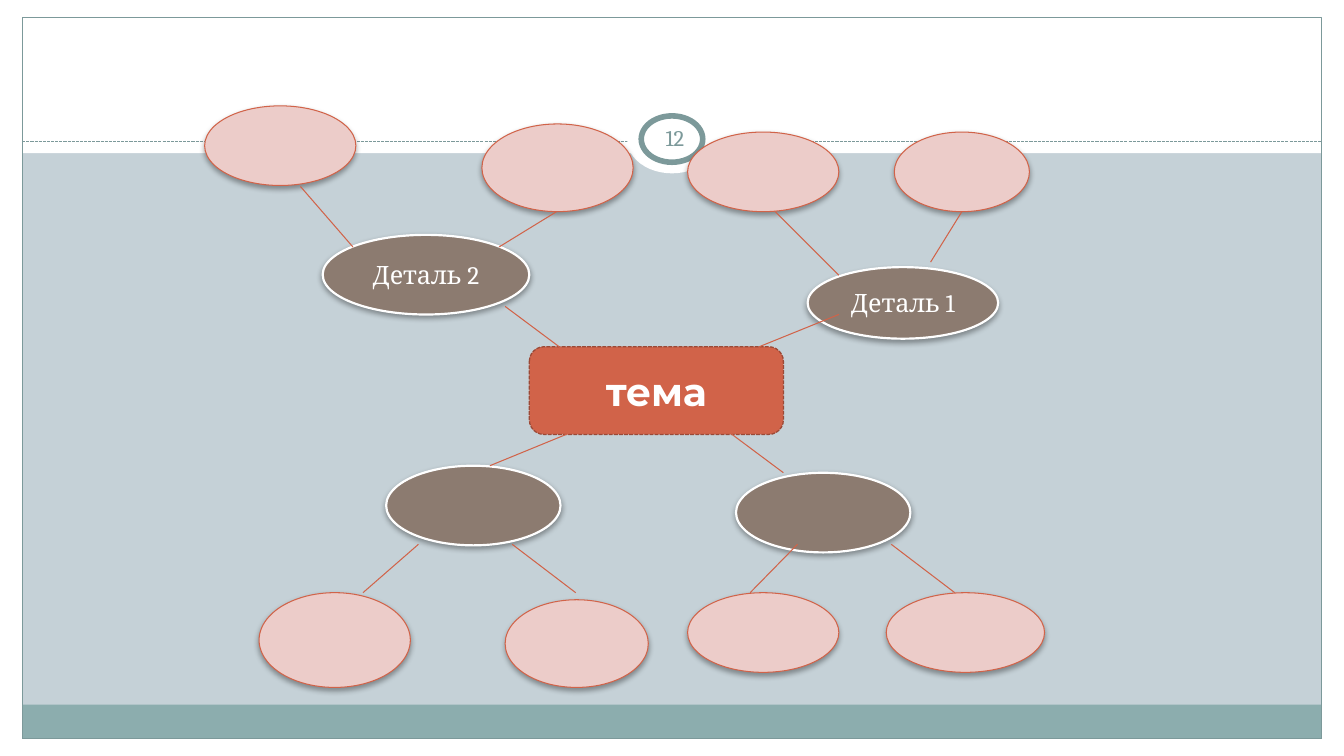
from dataclasses import dataclass

from lxml import etree
from pptx import Presentation
from pptx.dml.color import RGBColor
from pptx.enum.dml import MSO_LINE_DASH_STYLE as Dash
from pptx.enum.shapes import MSO_CONNECTOR as Connector, MSO_SHAPE as Shape
from pptx.enum.text import MSO_ANCHOR as Anchor, PP_ALIGN as Align
from pptx.oxml.ns import qn
from pptx.util import Inches, Pt


@dataclass(frozen=True)
class Theme:
    background: str = "C5D1D7"
    white: str = "FFFFFF"
    footer: str = "8CADAE"
    frame: str = "7C999A"
    accent: str = "D16349"
    accent_dark: str = "9B4936"
    detail: str = "8C7B70"
    leaf: str = "ECCCC9"
    shadow: str = "000000"
    body_font: str = "Cambria"
    topic_font: str = "Montserrat"
    topic_size: float = 28
    detail_size: float = 18
    number_size: float = 16
    thin: float = 0.75


class MindMap:
    def __init__(self, prs, theme):
        self.theme = theme
        self.s = prs.slides.add_slide(prs.slide_layouts[6])
        fill = self.s.background.fill
        fill.solid()
        fill.fore_color.rgb = RGBColor.from_string(theme.background)

    def outline(self, line, color, width, dash=None):
        line.color.rgb = RGBColor.from_string(color)
        line.width = Pt(width)
        if dash:
            line.dash_style = dash

    def shape(self, kind, box, fill=None, line=None):
        """Add a flat shape; line is (color, width[, dash])."""
        sp = self.s.shapes.add_shape(kind, *map(Inches, box))
        if fill:
            sp.fill.solid()
            sp.fill.fore_color.rgb = RGBColor.from_string(fill)
        else:
            sp.fill.background()
        if line:
            self.outline(sp.line, *line)
        else:
            sp.line.fill.background()
        sp.shadow.inherit = False
        return sp

    def bubble(self, box, fill, line):
        """Add an ellipse with a soft shadow below it."""
        sp = self.shape(Shape.OVAL, box, fill, line)
        effects = sp.element.spPr.find(qn("a:effectLst"))
        shadow = etree.SubElement(
            effects, qn("a:outerShdw"), blurRad=str(Pt(4)), dist=str(Pt(2)),
            dir="5400000", algn="ctr", rotWithShape="0")
        color = etree.SubElement(shadow, qn("a:srgbClr"), val=self.theme.shadow)
        etree.SubElement(color, qn("a:alpha"), val="35000")
        return sp

    def line(self, start, end, color, dash=None):
        cn = self.s.shapes.add_connector(
            Connector.STRAIGHT, *map(Inches, start + end))
        self.outline(cn.line, color, self.theme.thin, dash)
        etree.SubElement(cn.element.spPr, qn("a:effectLst"))

    def label(self, sp, text, color, **font):
        """Put one centred line of text in a shape."""
        tf = sp.text_frame
        tf.word_wrap = True
        tf.vertical_anchor = Anchor.MIDDLE
        p = tf.paragraphs[0]
        p.alignment = Align.CENTER
        r = p.add_run()
        r.text = text
        r.font.color.rgb = RGBColor.from_string(color)
        for name, value in font.items():
            setattr(r.font, name, value)

    def page_number(self, box, text):
        sp = self.s.shapes.add_textbox(*map(Inches, box))
        for side in ("left", "top", "right", "bottom"):
            setattr(sp.text_frame, f"margin_{side}", Inches(0.05))
        self.label(sp, text, self.theme.frame,
                   name=self.theme.body_font, size=Pt(self.theme.number_size))


WIDTH, HEIGHT = 13.33, 7.5
EDGE = 0.22
INNER = WIDTH - 2 * EDGE

MARGINS = [
    (0, 7.33, WIDTH, 0.17),
    (0, 0, WIDTH, 1.52),
    (0, 0, EDGE, HEIGHT),
    (WIDTH - EDGE, 0, EDGE, HEIGHT),
]
LEAVES = [
    (8.87, 1.31, 1.34, 0.79),
    (4.78, 1.23, 1.5, 0.87),
    (2.03, 1.05, 1.5, 0.79),
    (2.57, 5.88, 1.5, 0.94),
    (5.01, 5.95, 1.42, 0.87),
    (6.82, 5.88, 1.5, 0.79),
    (8.79, 5.88, 1.57, 0.79),
    (6.82, 1.31, 1.5, 0.79),
]
DETAILS = [
    ((8.01, 2.65, 1.89, 0.71), "Деталь 1"),
    ((3.2, 2.33, 2.05, 0.79), "Деталь 2"),
    ((7.3, 4.69, 1.73, 0.79), ""),
    ((3.83, 4.62, 1.73, 0.79), ""),
]
BRANCHES = [
    ((5.64, 4.3), (4.86, 4.62)),
    ((8.32, 3.12), (7.53, 3.44)),
    ((7.69, 2.1), (8.32, 2.73)),
    ((9.54, 2.1), (9.23, 2.6)),
    ((2.98, 1.85), (3.5, 2.45)),
    ((5.52, 2.1), (4.95, 2.45)),
    ((7.14, 4.22), (7.77, 4.69)),
    ((8.84, 5.4), (9.47, 5.88)),
    ((5.08, 5.4), (5.71, 5.88)),
    ((5.01, 3.04), (5.64, 3.51)),
    ((4.15, 5.4), (3.6, 5.88)),
    ((7.91, 5.4), (7.44, 5.88)),
]


def draw_frame(m, t):
    for box in MARGINS:
        m.shape(Shape.RECTANGLE, box, t.white)
    m.shape(Shape.RECTANGLE, (EDGE, 6.99, INNER, 0.34), t.footer)
    m.shape(Shape.RECTANGLE, (EDGE, 0.17, INNER, 7.16), line=(t.frame, t.thin))
    m.line((EDGE, 1.4), (EDGE + INNER, 1.4), t.frame, Dash.SQUARE_DOT)
    m.shape(Shape.OVAL, (6.22, 1.05, 0.89, 0.67), t.white)
    m.shape(Shape.OVAL, (6.36, 1.15, 0.61, 0.46), t.white, (t.frame, 4))


def draw_map(m, t):
    topic = m.shape(Shape.ROUNDED_RECTANGLE, (5.25, 3.44, 2.52, 0.87),
                    t.accent, (t.accent_dark, 0.9, Dash.SQUARE_DOT))
    m.label(topic, "тема", t.white, name=t.topic_font,
            size=Pt(t.topic_size), bold=True)
    for box in LEAVES:
        m.bubble(box, t.leaf, (t.accent, t.thin))
    for box, text in DETAILS:
        sp = m.bubble(box, t.detail, (t.white, 1.57))
        if text:
            m.label(sp, text, t.white, name=t.body_font, size=Pt(t.detail_size))
    for start, end in BRANCHES:
        m.line(start, end, t.accent)


def main():
    prs = Presentation()
    prs.slide_width, prs.slide_height = Inches(WIDTH), Inches(HEIGHT)
    theme = Theme()
    mind_map = MindMap(prs, theme)
    draw_frame(mind_map, theme)
    draw_map(mind_map, theme)
    mind_map.page_number((6.36, 1.12, 0.67, 0.48), "12")
    prs.save("out.pptx")


if __name__ == "__main__":
    main()
